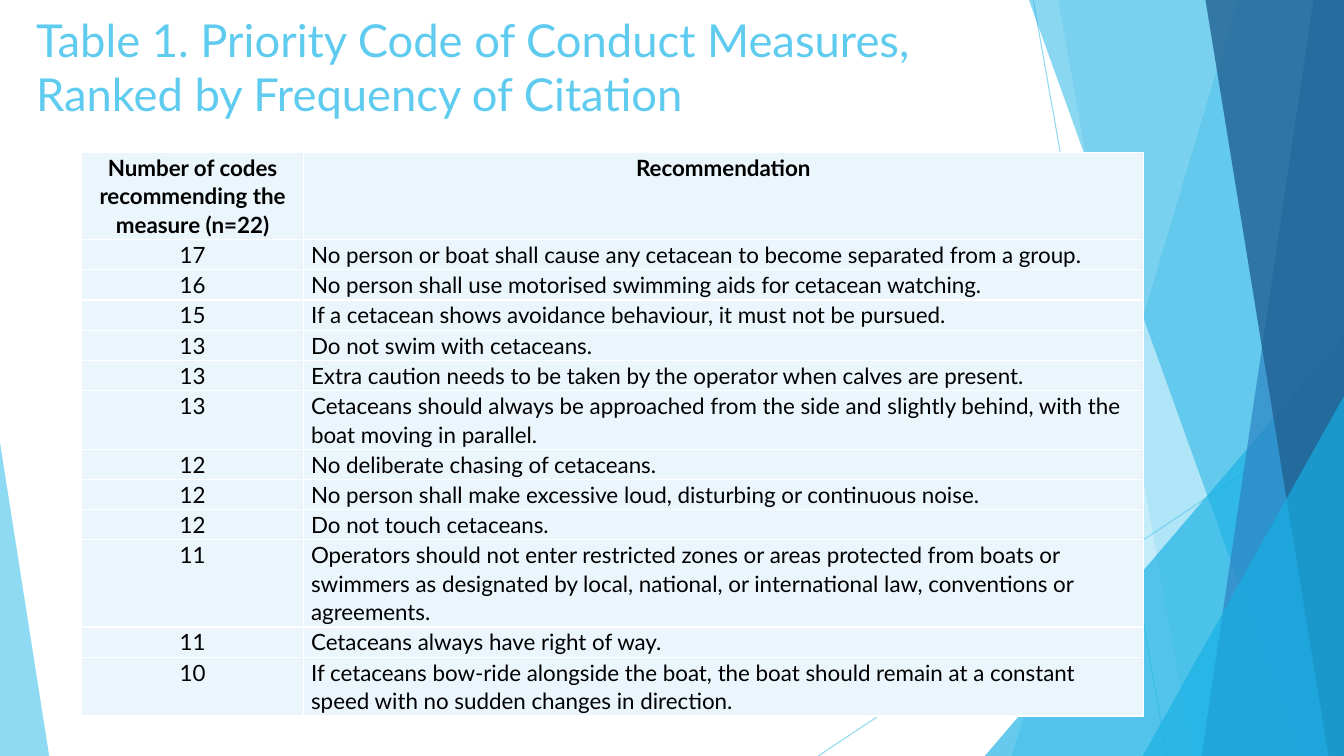
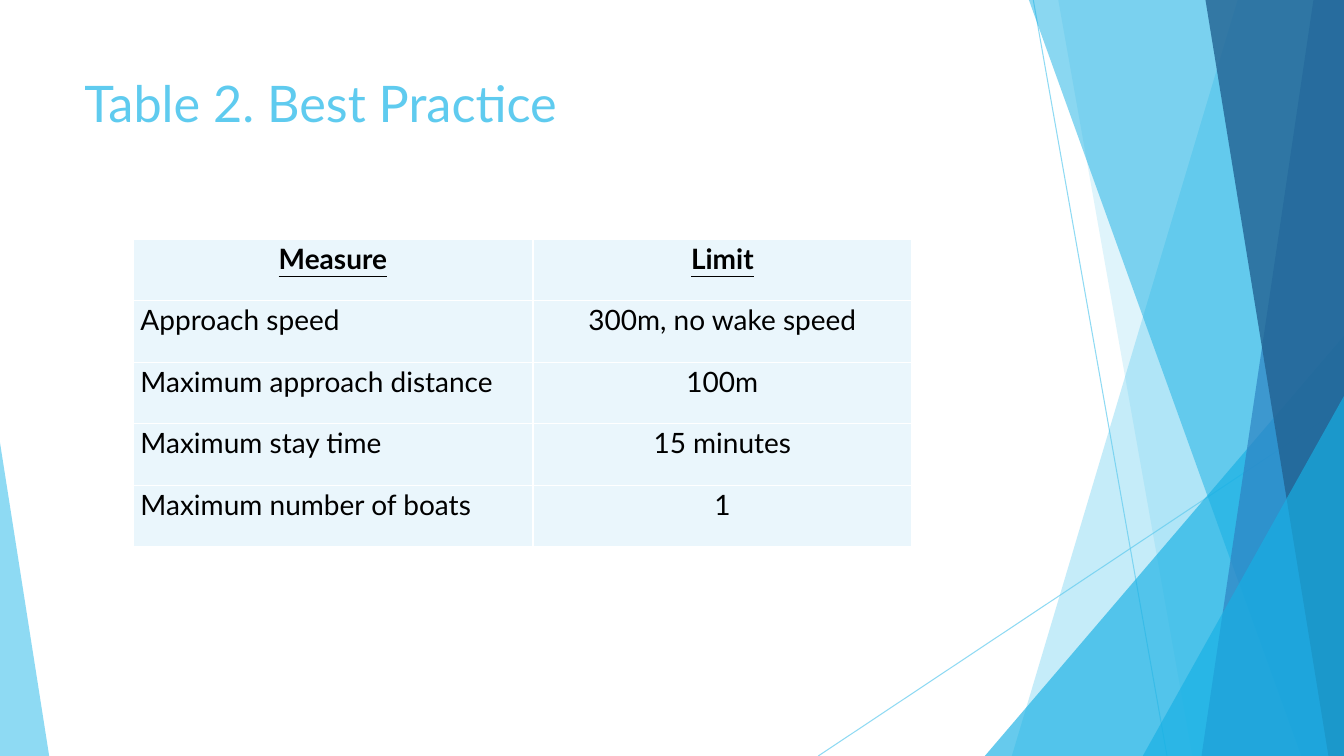
from dataclasses import dataclass

from lxml import etree
from pptx import Presentation
from pptx.dml.color import RGBColor
from pptx.enum.shapes import MSO_CONNECTOR, MSO_SHAPE
from pptx.enum.text import MSO_ANCHOR, PP_ALIGN
from pptx.oxml.ns import qn
from pptx.util import Cm, Pt

STRAIGHT = MSO_CONNECTOR.STRAIGHT
TRIANGLE = MSO_SHAPE.ISOSCELES_TRIANGLE
TOP = MSO_ANCHOR.TOP
LEFT, CENTER = PP_ALIGN.LEFT, PP_ALIGN.CENTER


@dataclass(frozen=True)
class Theme:
    font: str = "Lato"
    sky: str = "5FCBEF"
    cyan: str = "17B0E4"
    blue: str = "2E83C3"
    navy: str = "226292"
    ink: str = "000000"
    cell: str = "EAF6FC"
    border: str = "FFFFFF"
    title_size: float = 36
    long_title_size: float = 32.4
    measures_size: float = 16
    limits_size: float = 20
    hairline: float = 0.75
    border_width: float = 1
    line_spacing: float = 1.07
    space_after: float = 8


@dataclass(frozen=True)
class Box:
    left: float
    top: float
    width: float
    height: float

    @property
    def right(self):
        return self.left + self.width

    @property
    def bottom(self):
        return self.top + self.height


THEME = Theme()
PAGE = Box(0, 0, 33.87, 19.05)

RAYS = [((26.04, 0), (29.41, 19.05)), ((33.87, 10.24), (20.62, 19.05))]

MEASURES = [
    ("Number of codes recommending the measure (n=22)", "Recommendation", 3),
    ("17", "No person or boat shall cause any cetacean to become separated from a group.", 1),
    ("16", "No person shall use motorised swimming aids for cetacean watching.", 1),
    ("15", "If a cetacean shows avoidance behaviour, it must not be pursued.", 1),
    ("13", "Do not swim with cetaceans.", 1),
    ("13", "Extra caution needs to be taken by the operator when calves are present.", 1),
    ("13", "Cetaceans should always be approached from the side and slightly behind, "
           "with the boat moving in parallel.", 2),
    ("12", "No deliberate chasing of cetaceans.", 1),
    ("12", "No person shall make excessive loud, disturbing or continuous noise.", 1),
    ("12", "Do not touch cetaceans.", 1),
    ("11", "Operators should not enter restricted zones or areas protected from boats or "
           "swimmers as designated by local, national, or international law, conventions "
           "or agreements.", 3),
    ("11", "Cetaceans always have right of way.", 1),
    ("10", "If cetaceans bow-ride alongside the boat, the boat should remain at a constant "
           "speed with no sudden changes in direction.", 2),
]

LIMITS = [
    ("Measure", "Limit"),
    ("Approach speed", "300m, no wake speed"),
    ("Maximum approach distance", "100m"),
    ("Maximum stay time", "15 minutes"),
    ("Maximum number of boats", "1"),
]


def rgb(color):
    return RGBColor.from_string(color)


def set_opacity(shape, percent):
    for color in shape._element.spPr.iter(qn("a:srgbClr")):
        etree.SubElement(color, qn("a:alpha"), val=str(percent * 1000))


def paint(shape, color, opacity):
    shape.shadow.inherit = False
    shape.fill.solid()
    shape.fill.fore_color.rgb = rgb(color)
    shape.line.fill.background()
    set_opacity(shape, opacity)


def add_ray(slide, box, start, end):
    ray = slide.shapes.add_connector(
        STRAIGHT,
        Cm(box.left + start[0]), Cm(box.top + start[1]),
        Cm(box.left + end[0]), Cm(box.top + end[1]),
    )
    ray.line.color.rgb = rgb(THEME.sky)
    ray.line.width = Pt(THEME.hairline)
    set_opacity(ray, 70)
    etree.SubElement(ray._element.spPr, qn("a:effectLst"))


def add_facet(slide, box, top_x, bottom_x, color, opacity):
    outline = slide.shapes.build_freeform(Cm(box.left + top_x), Cm(box.top))
    outline.add_line_segments([
        (Cm(box.right), Cm(box.top)),
        (Cm(box.right), Cm(box.bottom)),
        (Cm(box.left + bottom_x), Cm(box.bottom)),
    ])
    paint(outline.convert_to_shape(), color, opacity)


def add_corner(slide, box, apex, color, opacity):
    corner = slide.shapes.add_shape(
        TRIANGLE, Cm(box.left), Cm(box.top), Cm(box.width), Cm(box.height)
    )
    corner.adjustments[0] = apex
    paint(corner, color, opacity)


def add_right_corner(slide, box, x, y):
    corner = Box(box.left + x, box.top + y, box.width - x, box.height - y)
    add_corner(slide, corner, 1, THEME.cyan, 66)


def add_backdrop(slide, box):
    for start, end in RAYS:
        add_ray(slide, box, start, end)
    add_facet(slide, box, 31.19, 25.5, THEME.sky, 36)
    add_facet(slide, box, 26.67, 30.05, THEME.sky, 20)
    add_right_corner(slide, box, 24.82, 8.46)
    add_facet(slide, box, 25.93, 32.79, THEME.cyan, 50)
    add_facet(slide, box, 33.1, 30.28, THEME.blue, 70)
    add_facet(slide, box, 30.38, 33.48, THEME.navy, 80)
    add_right_corner(slide, box, 28.8, 9.98)
    left_corner = Box(box.left, box.bottom - 7.9, 1.24, 7.9)
    add_corner(slide, left_corner, 0, THEME.sky, 70)


def style_font(paragraph, size, color):
    paragraph.font.name = THEME.font
    paragraph.font.size = Pt(size)
    paragraph.font.color.rgb = rgb(color)


def add_title(slide, box, wording, size):
    title = slide.shapes.add_textbox(
        Cm(box.left), Cm(box.top), Cm(box.width), Cm(box.height)
    ).text_frame
    title.word_wrap = True
    title.vertical_anchor = TOP
    title.text = wording
    style_font(title.paragraphs[0], size, THEME.sky)


def add_borders(cell):
    properties = cell._tc.get_or_add_tcPr()
    for position, side in enumerate(("lnL", "lnR", "lnT", "lnB")):
        edge = etree.Element(qn(f"a:{side}"), w=str(Pt(THEME.border_width)))
        fill = etree.SubElement(edge, qn("a:solidFill"))
        etree.SubElement(fill, qn("a:srgbClr"), val=THEME.border)
        properties.insert(position, edge)


def fill_cell(cell, wording, size, alignment, heading, underline):
    cell.fill.solid()
    cell.fill.fore_color.rgb = rgb(THEME.cell)
    add_borders(cell)
    cell.margin_left = cell.margin_right = Cm(0.19)
    cell.margin_top = cell.margin_bottom = 0
    cell.vertical_anchor = TOP
    cell.text = wording
    paragraph = cell.text_frame.paragraphs[0]
    paragraph.alignment = alignment
    paragraph.line_spacing = THEME.line_spacing
    paragraph.space_after = Pt(THEME.space_after)
    style_font(paragraph, size, THEME.ink)
    paragraph.font.bold = heading
    paragraph.font.underline = heading and underline


def add_grid(slide, box, rows, first_width, heights, size, alignments, underline=False):
    grid = slide.shapes.add_table(
        len(rows), len(alignments),
        Cm(box.left), Cm(box.top), Cm(box.width), Cm(box.height),
    ).table
    grid.first_row = grid.horz_banding = False
    grid.columns[0].width = Cm(first_width)
    grid.columns[1].width = Cm(box.width - first_width)
    for row_index, (wordings, height) in enumerate(zip(rows, heights)):
        grid.rows[row_index].height = Cm(height)
        heading = row_index == 0
        for column, (wording, alignment) in enumerate(zip(wordings, alignments)):
            fill_cell(
                grid.cell(row_index, column), wording, size,
                CENTER if heading else alignment, heading, underline,
            )


def add_measures_slide(slide, box):
    add_backdrop(slide, box)
    add_title(
        slide, Box(box.left + 0.66, box.top + 0.18, 23.88, 3.66),
        "Table 1. Priority Code of Conduct Measures, Ranked by Frequency of Citation",
        THEME.long_title_size,
    )
    heights = [0.04 + 0.72 * lines for *_, lines in MEASURES]
    add_grid(
        slide, Box(box.left + 2.06, box.top + 3.84, 26.75, sum(heights)),
        [wordings for *wordings, _ in MEASURES],
        5.59, heights, THEME.measures_size, (CENTER, LEFT),
    )


def add_limits_slide(slide, box):
    add_backdrop(slide, box)
    add_title(
        slide, Box(box.left + 1.88, box.top + 1.7, 23.88, 3.66),
        "Table 2. Best Practice", THEME.title_size,
    )
    heights = [1.55] * len(LIMITS)
    add_grid(
        slide, Box(box.left + 3.35, box.top + 6.03, 19.63, sum(heights)),
        LIMITS, 10.08, heights, THEME.limits_size, (LEFT, CENTER), underline=True,
    )


def main():
    deck = Presentation()
    deck.slide_width, deck.slide_height = Cm(PAGE.width), Cm(PAGE.height)
    blank = deck.slide_layouts[6]
    for build in (add_measures_slide, add_limits_slide):
        build(deck.slides.add_slide(blank), PAGE)
    deck.save("out.pptx")


if __name__ == "__main__":
    main()
